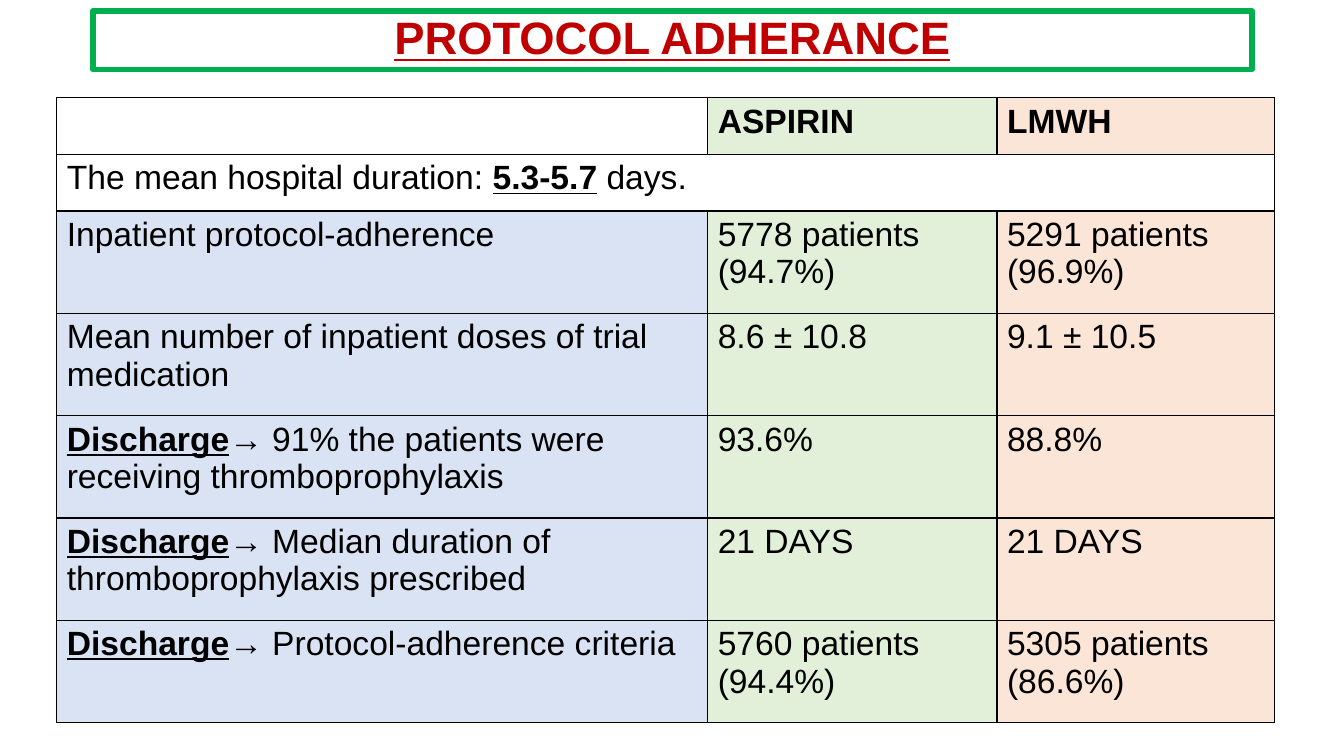
from lxml.etree import SubElement
from pptx import Presentation
from pptx.dml.color import RGBColor
from pptx.enum.text import MSO_ANCHOR, MSO_AUTO_SIZE, PP_ALIGN
from pptx.oxml.ns import qn
from pptx.util import Cm, Pt

BLACK = RGBColor(0x00, 0x00, 0x00)
WHITE = RGBColor(0xFF, 0xFF, 0xFF)
RED = RGBColor(0xC0, 0x00, 0x00)
GREEN = RGBColor(0x00, 0xB0, 0x50)
PALE_BLUE = RGBColor(0xDA, 0xE3, 0xF3)
PALE_GREEN = RGBColor(0xE2, 0xF0, 0xD9)
PALE_ORANGE = RGBColor(0xFB, 0xE5, 0xD6)

TITLE_FORMAT = {"name": "Arial", "size": Pt(32.4), "bold": True, "underline": True}
BODY_FORMAT = {"name": "Arial", "size": Pt(24), "bold": False, "underline": False}
HEADER_FORMAT = {**BODY_FORMAT, "bold": True}
KEY_FORMAT = {**HEADER_FORMAT, "underline": True}

COLUMN_FILLS = [PALE_BLUE, PALE_GREEN, PALE_ORANGE]
COLUMN_SHARES = [6.46, 2.87, 2.75]
ROW_SHARES = [0.56, 0.56] + [1.01] * 5

DISCHARGE = ("Discharge", KEY_FORMAT)
ADHERENCE_ROWS = [
    [[], [("ASPIRIN", HEADER_FORMAT)], [("LMWH", HEADER_FORMAT)]],
    [[("The mean hospital duration: ", BODY_FORMAT), ("5.3-5.7", KEY_FORMAT),
      (" days.", BODY_FORMAT)], [], []],
    ["Inpatient protocol-adherence", "5778 patients (94.7%)", "5291 patients (96.9%)"],
    ["Mean number of inpatient doses of trial medication", "8.6 ± 10.8", "9.1 ± 10.5"],
    [[DISCHARGE, ("→ 91% the patients were receiving thromboprophylaxis", BODY_FORMAT)],
     "93.6%", "88.8%"],
    [[DISCHARGE, ("→ ", HEADER_FORMAT),
      ("Median duration of thromboprophylaxis prescribed", BODY_FORMAT)],
     "21 DAYS", "21 DAYS"],
    [[DISCHARGE, ("→ ", HEADER_FORMAT), ("Protocol-adherence criteria", BODY_FORMAT)],
     "5760 patients (94.4%)", "5305 patients (86.6%)"],
]


def set_attributes(target, values):
    for name, value in values.items():
        setattr(target, name, value)


def add_run(paragraph, text, font_format, color):
    run = paragraph.add_run()
    run.text = text
    set_attributes(run.font, font_format)
    run.font.color.rgb = color


def add_borders(cell):
    properties = cell._tc.get_or_add_tcPr()
    for side in ("lnL", "lnR", "lnT", "lnB"):
        line = SubElement(properties, qn(f"a:{side}"), w=str(Pt(1)))
        fill = SubElement(line, qn("a:solidFill"))
        SubElement(fill, qn("a:srgbClr"), val=str(BLACK))


def fill_cell(cell, content, fill_color):
    add_borders(cell)
    cell.fill.solid()
    cell.fill.fore_color.rgb = fill_color
    runs = [(content, BODY_FORMAT)] if isinstance(content, str) else content
    for text, font_format in runs:
        add_run(cell.text_frame.paragraphs[0], text, font_format, BLACK)


def build_title(slide, left, top, width, height):
    title = slide.shapes.title
    set_attributes(title, {"left": left, "top": top, "width": width, "height": height})
    title.line.color.rgb = GREEN
    title.line.width = Pt(4)
    set_attributes(title.text_frame, {
        "auto_size": MSO_AUTO_SIZE.NONE,
        "vertical_anchor": MSO_ANCHOR.MIDDLE,
        "word_wrap": True,
    })
    paragraph = title.text_frame.paragraphs[0]
    set_attributes(paragraph, {"alignment": PP_ALIGN.CENTER, "line_spacing": 0.9})
    add_run(paragraph, "PROTOCOL ADHERANCE", TITLE_FORMAT, RED)


def build_adherence_table(slide, left, top, width, height):
    table = slide.shapes.add_table(
        len(ROW_SHARES), len(COLUMN_SHARES), left, top, width, height).table
    set_attributes(table, {"first_row": False, "horz_banding": False})
    for column, share in zip(table.columns, COLUMN_SHARES):
        column.width = int(width * share / sum(COLUMN_SHARES))
    for row, share in zip(table.rows, ROW_SHARES):
        row.height = int(height * share / sum(ROW_SHARES))
    for row_index, contents in enumerate(ADHERENCE_ROWS):
        for column_index, content in enumerate(contents):
            plain = row_index == 1 or (row_index == 0 and column_index == 0)
            fill_color = WHITE if plain else COLUMN_FILLS[column_index]
            fill_cell(table.cell(row_index, column_index), content, fill_color)
    table.cell(1, 0).merge(table.cell(1, 2))


def main():
    presentation = Presentation()
    set_attributes(presentation, {"slide_width": Cm(33.87), "slide_height": Cm(19.05)})
    slide = presentation.slides.add_slide(presentation.slide_layouts[5])
    build_title(slide, Cm(2.34), Cm(0.28), Cm(29.21), Cm(1.47))
    build_adherence_table(slide, Cm(1.43), Cm(2.46), Cm(30.68), Cm(15.75))
    presentation.save("out.pptx")


if __name__ == "__main__":
    main()
